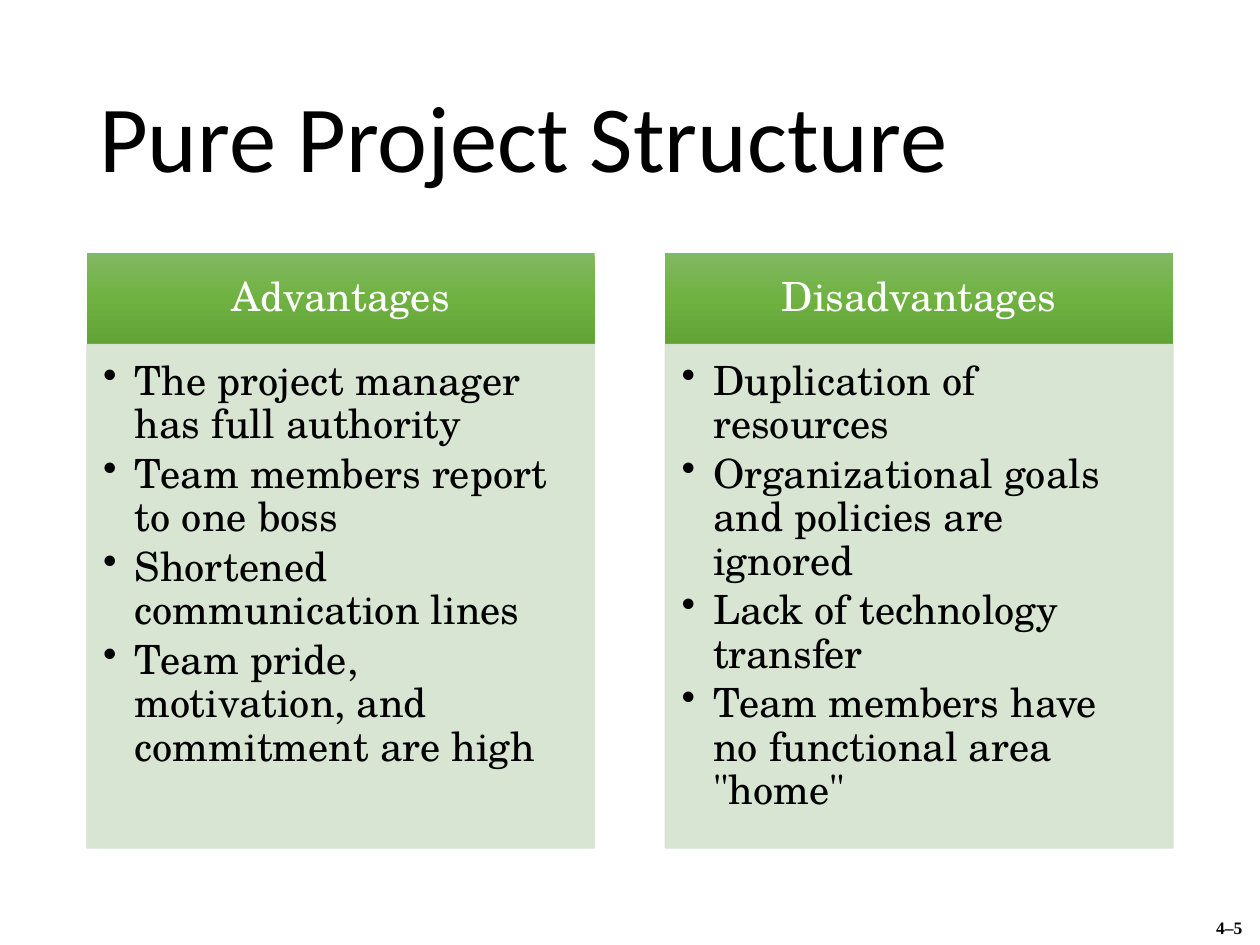
from copy import deepcopy

from lxml import etree
from pptx import Presentation
from pptx.dml.color import RGBColor
from pptx.enum.shapes import MSO_SHAPE
from pptx.enum.text import MSO_ANCHOR, MSO_AUTO_SIZE, PP_ALIGN
from pptx.oxml.ns import qn
from pptx.util import Cm, Pt

RECTANGLE = MSO_SHAPE.RECTANGLE
TOP, MIDDLE = MSO_ANCHOR.TOP, MSO_ANCHOR.MIDDLE
LEFT, CENTER = PP_ALIGN.LEFT, PP_ALIGN.CENTER
FIT_SHAPE = MSO_AUTO_SIZE.SHAPE_TO_FIT_TEXT

BLACK = RGBColor(0x00, 0x00, 0x00)
WHITE = RGBColor(0xFF, 0xFF, 0xFF)
PANEL = RGBColor(0xD5, 0xE3, 0xCF)
HEADER_STOPS = [
    (0, RGBColor(0x81, 0xB8, 0x61)),
    (0.5, RGBColor(0x6F, 0xB2, 0x42)),
    (1, RGBColor(0x62, 0xA3, 0x36)),
]

MARGIN = 1.75
HEADER_TOP, HEADER_HEIGHT = 5.11, 1.83
PANEL_HEIGHT = 10.16
COLUMN_WIDTH, COLUMN_STEP = 10.24, 11.66
INDENT = 0.64

COLUMNS = [
    ("Advantages", [
        "The project manager has full authority",
        "Team members report to one boss",
        "Shortened communication lines",
        "Team pride, motivation, and commitment are high",
    ]),
    ("Disadvantages", [
        "Duplication of resources",
        "Organizational goals and policies are ignored",
        "Lack of technology transfer",
        'Team members have no functional area "home"',
    ]),
]


def apply(target, values):
    for name, value in values.items():
        setattr(target, name, value)


class SlideBuilder:
    title_font = {"name": "Calibri", "size": Pt(54)}
    body_font = {"name": "TeX Gyre Schola", "size": Pt(23)}
    number_font = {"name": "Times New Roman", "size": Pt(10), "bold": True}

    def __init__(self, slide):
        self.slide = slide

    def fill_text(self, box, lines, font, color, frame, layout):
        text_frame = box.text_frame
        apply(text_frame, {"word_wrap": True, **frame})
        text_frame.text = "\n".join(lines)
        for para in text_frame.paragraphs:
            apply(para, layout)
            for span in para.runs:
                apply(span.font, font)
                span.font.color.rgb = color

    def label(self, place, text, font, frame, layout):
        box = self.slide.shapes.add_textbox(*map(Cm, place))
        self.fill_text(box, [text], font, BLACK, frame, layout)

    def title(self, place, text):
        self.label(place, text, self.title_font, {"vertical_anchor": MIDDLE},
                   {"line_spacing": 0.9})

    def page_number(self, place, text):
        self.label(place, text, self.number_font,
                   {"word_wrap": False, "auto_size": FIT_SHAPE},
                   {"alignment": CENTER})

    def rectangle(self, place):
        box = self.slide.shapes.add_shape(RECTANGLE, *map(Cm, place))
        box.shadow.inherit = False
        return box

    def header(self, place, text):
        box = self.rectangle(place)
        box.line.fill.background()
        box.fill.gradient()
        box.fill.gradient_angle = 270
        stop_list = box._element.spPr.find(".//" + qn("a:gsLst"))
        stop_list.insert(1, deepcopy(stop_list[0]))
        for stop, (position, color) in zip(box.fill.gradient_stops, HEADER_STOPS):
            stop.position = position
            stop.color.rgb = color
        self.fill_text(box, [text], self.body_font, WHITE,
                       {"vertical_anchor": MIDDLE, "margin_left": Cm(0.46),
                        "margin_right": Cm(0.46), "margin_top": Cm(0.25),
                        "margin_bottom": Cm(0.25)},
                       {"alignment": CENTER, "line_spacing": 0.9})

    def panel(self, place, lines):
        box = self.rectangle(place)
        box.line.width = Pt(0.5)
        for fill in (box.fill, box.line.fill):
            fill.solid()
            fill.fore_color.rgb = PANEL
        for color in box._element.spPr.iter(qn("a:srgbClr")):
            etree.SubElement(color, qn("a:alpha"), val="90000")
        self.fill_text(box, lines, self.body_font, BLACK,
                       {"vertical_anchor": TOP, "margin_left": Cm(0.33),
                        "margin_right": Cm(0.46), "margin_top": Cm(0.33),
                        "margin_bottom": Cm(0.51)},
                       {"alignment": LEFT, "line_spacing": 0.9,
                        "space_after": Pt(3.45), "level": 1})
        for para in box.text_frame.paragraphs:
            properties = para._p.get_or_add_pPr()
            properties.set("marL", str(Cm(INDENT)))
            properties.set("indent", str(-Cm(INDENT)))
            etree.SubElement(properties, qn("a:buChar"), char="•")


def main():
    deck = Presentation()
    apply(deck, {"slide_width": Cm(25.4), "slide_height": Cm(19.05)})
    page = SlideBuilder(deck.slides.add_slide(deck.slide_layouts[6]))
    page.page_number((24.13, 18.36, 1.3, 0.69), "4–5")
    page.title((MARGIN, 1.02, 21.89, 3.68), "Pure Project Structure")
    for index, (heading, points) in enumerate(COLUMNS):
        left = MARGIN + index * COLUMN_STEP
        page.header((left, HEADER_TOP, COLUMN_WIDTH, HEADER_HEIGHT), heading)
        page.panel((left, HEADER_TOP + HEADER_HEIGHT, COLUMN_WIDTH, PANEL_HEIGHT),
                   points)
    deck.save("out.pptx")


if __name__ == "__main__":
    main()
